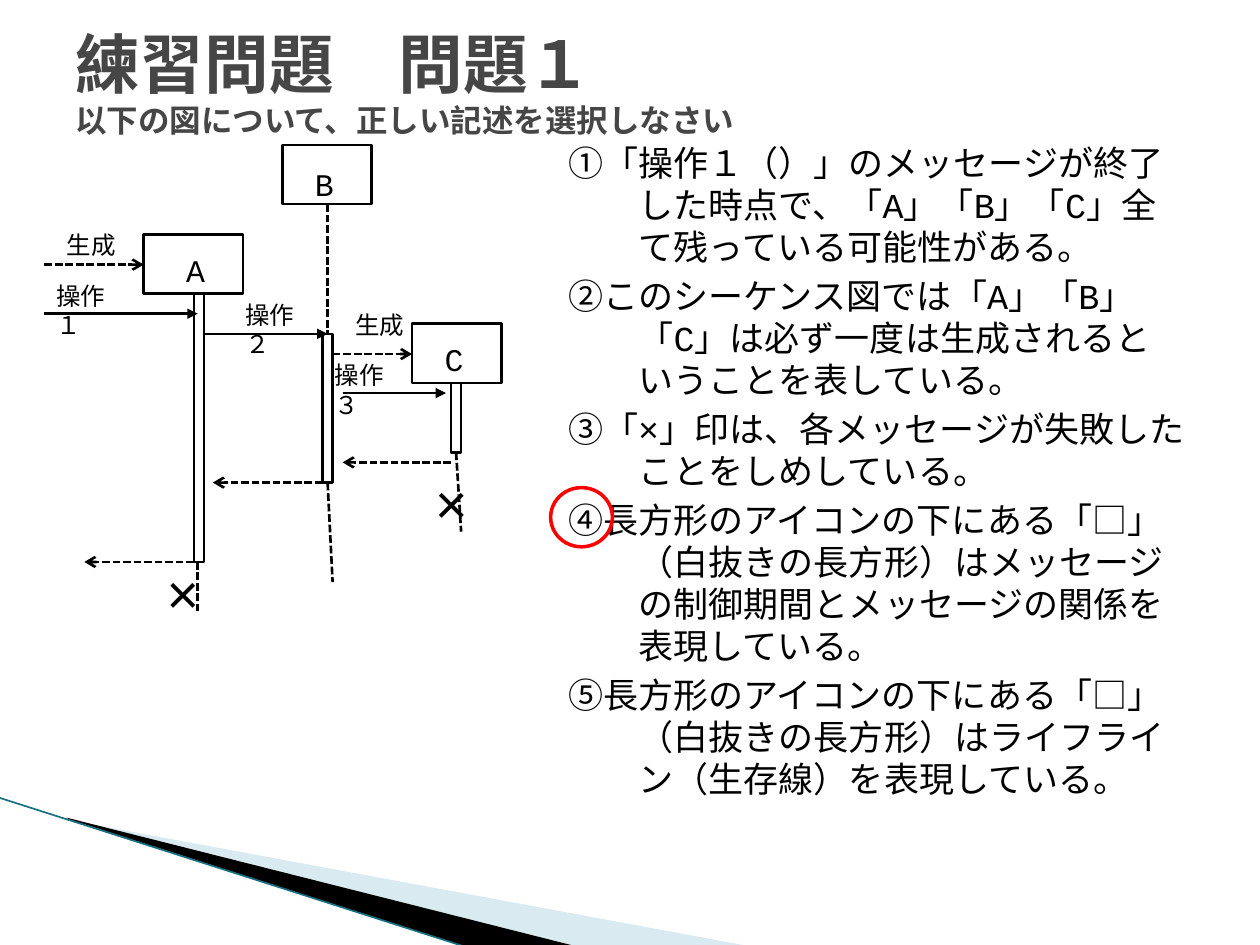
from lxml import etree
from pptx import Presentation
from pptx.dml.color import RGBColor
from pptx.enum.dml import MSO_LINE
from pptx.enum.shapes import MSO_CONNECTOR, MSO_SHAPE
from pptx.enum.text import MSO_ANCHOR
from pptx.oxml.ns import qn
from pptx.util import Inches, Pt

RECT, ELLIPSE = MSO_SHAPE.RECTANGLE, MSO_SHAPE.OVAL
STRAIGHT = MSO_CONNECTOR.STRAIGHT
DASH = MSO_LINE.SQUARE_DOT
MIDDLE = MSO_ANCHOR.MIDDLE

BLACK = RGBColor(0x00, 0x00, 0x00)
GREY = RGBColor(0x46, 0x46, 0x46)
RED = RGBColor(0xFF, 0x00, 0x00)
PALE_BLUE = RGBColor(0xA0, 0xCB, 0xDC)
EDGE_TEAL = RGBColor(0x17, 0x70, 0x7F)
FONT = "Courier New"

CHOICES = [
    "①「操作１（）」のメッセージが終了した時点で、「A」「B」「C」全て残っている可能性がある。",
    "②このシーケンス図では「A」「B」「C」は必ず一度は生成されるということを表している。",
    "③「×」印は、各メッセージが失敗したことをしめしている。",
    "④長方形のアイコンの下にある「□」（白抜きの長方形）はメッセージの制御期間とメッセージの関係を表現している。",
    "⑤長方形のアイコンの下にある「□」（白抜きの長方形）はライフライン（生存線）を表現している。",
]
# Object box and label box: left, top, width, height
OBJECTS = {
    "A": ((1.14, 1.86, 0.79, 0.47), (1.38, 1.94, 0.34, 0.4)),
    "B": ((2.24, 1.15, 0.71, 0.47), (2.4, 1.26, 0.41, 0.4)),
    "C": ((3.27, 2.57, 0.71, 0.47), (3.43, 2.65, 0.37, 0.4)),
}
ACTIVATIONS = [(1.54, 2.33, 0.08, 2.13), (2.56, 2.65, 0.08, 1.18), (3.58, 3.04, 0.08, 0.55)]
LIFELINES = [
    ((2.6, 1.62), (2.6, 2.65)),
    ((2.6, 3.83), (2.64, 4.62)),
    ((3.62, 3.59), (3.66, 4.22)),
    ((1.57, 4.46), (1.57, 4.85)),
]
# Messages are horizontal: sender x, receiver x, y
CALLS = [(0.35, 1.57, 2.49), (1.61, 2.6, 2.65), (2.72, 3.54, 3.12)]
CREATES = [(0.35, 1.14, 2.1), (2.64, 3.27, 2.81)]
RETURNS = [(3.58, 2.72, 3.67), (2.56, 1.69, 3.83), (1.54, 0.67, 4.46)]
DESTROYS = [(1.22, 4.38), (3.35, 3.67)]
LABELS = [
    ("生成", 0.43, 1.78, 0.59),
    ("生成", 2.72, 2.41, 0.59),
    ("操作１", 0.35, 2.18, 0.73),
    ("操作２", 1.85, 2.33, 0.73),
    ("操作３", 2.56, 2.81, 0.73),
]


def add_run(p, text, size, color=BLACK, bold=False):
    r = p.add_run()
    r.text = text
    for name, value in {"name": FONT, "size": Pt(size), "bold": bold}.items():
        setattr(r.font, name, value)
    r.font.color.rgb = color


def add_textbox(shapes, box):
    tf = shapes.add_textbox(*map(Inches, box)).text_frame
    tf.word_wrap = True
    return tf


def add_label(shapes, text, box, size):
    add_run(add_textbox(shapes, box).paragraphs[0], text, size)


def add_outline(shapes, kind, box, color=BLACK, width=1.5):
    sp = shapes.add_shape(kind, *map(Inches, box))
    sp.shadow.inherit = False
    sp.fill.background()
    sp.line.color.rgb = color
    sp.line.width = Pt(width)


def add_line(shapes, start, end, color=BLACK, width=1.5, dash=None, arrow=None):
    line = shapes.add_connector(STRAIGHT, *map(Inches, (*start, *end)))
    line.line.color.rgb = color
    line.line.width = Pt(width)
    if dash:
        line.line.dash_style = dash
    if arrow:
        etree.SubElement(line.line._get_or_add_ln(), qn("a:tailEnd"), type=arrow)
    etree.SubElement(line._element.spPr, qn("a:effectLst"))


def add_messages(shapes, messages, arrow, dash=None):
    for sender, receiver, y in messages:
        add_line(shapes, (sender, y), (receiver, y), dash=dash, arrow=arrow)


def add_wedge(shapes, points, color, opacity=None):
    start, *rest = [tuple(map(Inches, point)) for point in points]
    builder = shapes.build_freeform(*start)
    builder.add_line_segments(rest)
    sp = builder.convert_to_shape()
    sp.shadow.inherit = False
    sp.fill.solid()
    sp.fill.fore_color.rgb = color
    sp.line.fill.background()
    if opacity:
        clr = sp._element.spPr.find(qn("a:solidFill"))[0]
        etree.SubElement(clr, qn("a:alpha"), val=str(opacity * 1000))


def add_backdrop(shapes):
    add_wedge(shapes, [(0.55, 6.51), (5.95, 7.51), (4.56, 7.51), (0.55, 6.5)], PALE_BLUE, 40)
    add_wedge(shapes, [(0.53, 6.49), (4.57, 7.51), (3.72, 7.52), (0.54, 6.5)], BLACK)
    add_line(shapes, (-0.01, 6.33), (3.71, 7.52), EDGE_TEAL, 0.95)


def add_title(shapes):
    tf = add_textbox(shapes, (0.5, 0.3, 9, 0.69))
    tf.vertical_anchor = MIDDLE
    p = tf.paragraphs[0]
    add_run(p, "練習問題　問題１", 36.9, GREY, True)
    p.add_line_break()
    add_run(p, "以下の図について、正しい記述を選択しなさい", 18, GREY, True)


def add_choices(shapes):
    tf = add_textbox(shapes, (4.29, 1.07, 5.21, 5.98))
    for i, choice in enumerate(CHOICES):
        p = tf.add_paragraph() if i else tf.paragraphs[0]
        pPr = p._p.get_or_add_pPr()
        pPr.set("marL", str(Inches(0.68)))
        pPr.set("indent", str(Inches(-0.56)))
        if i:
            p.space_before = Pt(4)
        add_run(p, choice, 20)


def add_sequence_diagram(shapes):
    for name, (box, label_box) in OBJECTS.items():
        group = shapes.add_group_shape().shapes
        add_outline(group, RECT, box)
        add_label(group, name, label_box, 18)
    for start, end in LIFELINES:
        add_line(shapes, start, end, dash=DASH)
    for box in ACTIVATIONS:
        add_outline(shapes, RECT, box)
    add_messages(shapes, CALLS, "triangle")
    add_messages(shapes, CREATES + RETURNS, "arrow", DASH)
    for left, top in DESTROYS:
        add_label(shapes, "×", (left, top, 0.55, 0.64), 32)
    for text, left, top, width in LABELS:
        add_label(shapes, text, (left, top, width, 0.34), 14)


def main():
    prs = Presentation()
    prs.slide_width, prs.slide_height = Inches(10), Inches(7.5)
    shapes = prs.slides.add_slide(prs.slide_layouts[6]).shapes
    add_backdrop(shapes)
    add_choices(shapes)
    add_title(shapes)
    add_sequence_diagram(shapes)
    add_outline(shapes, ELLIPSE, (4.37, 3.87, 0.49, 0.47), RED, 2)
    prs.save("out.pptx")


if __name__ == "__main__":
    main()
